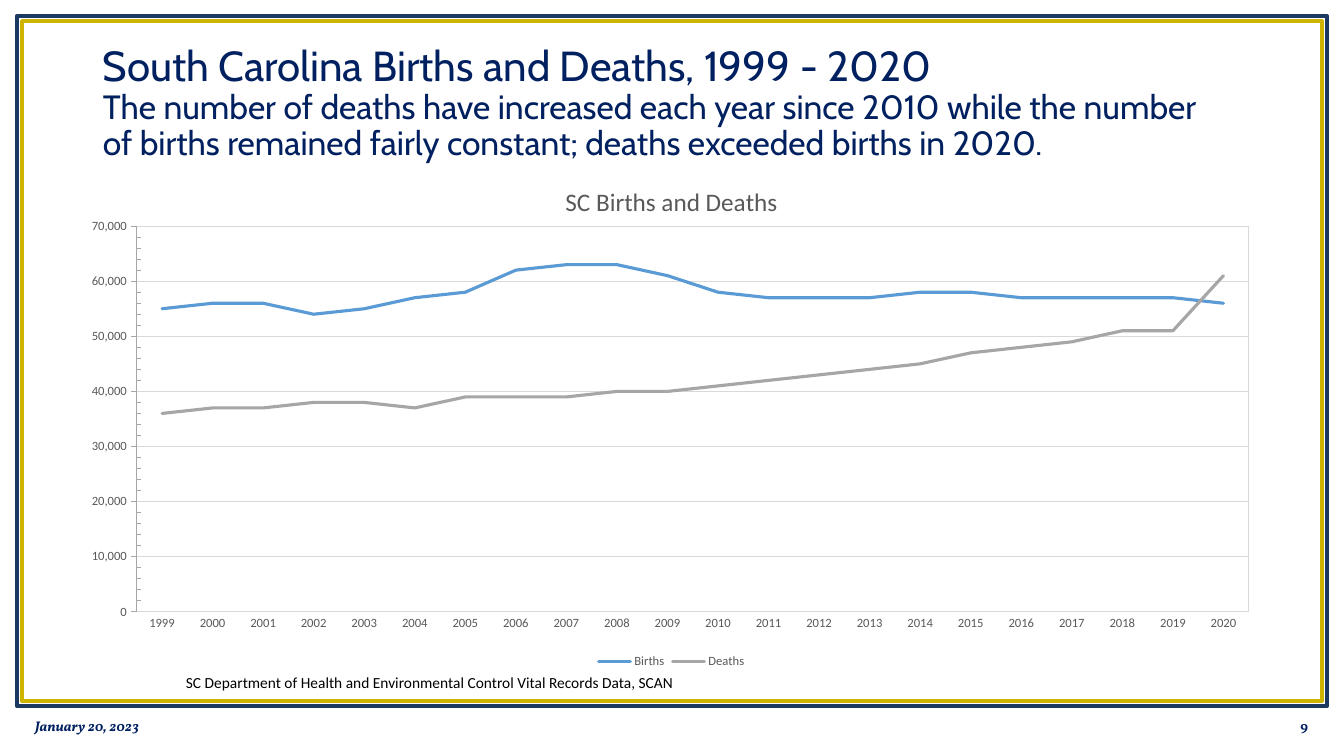
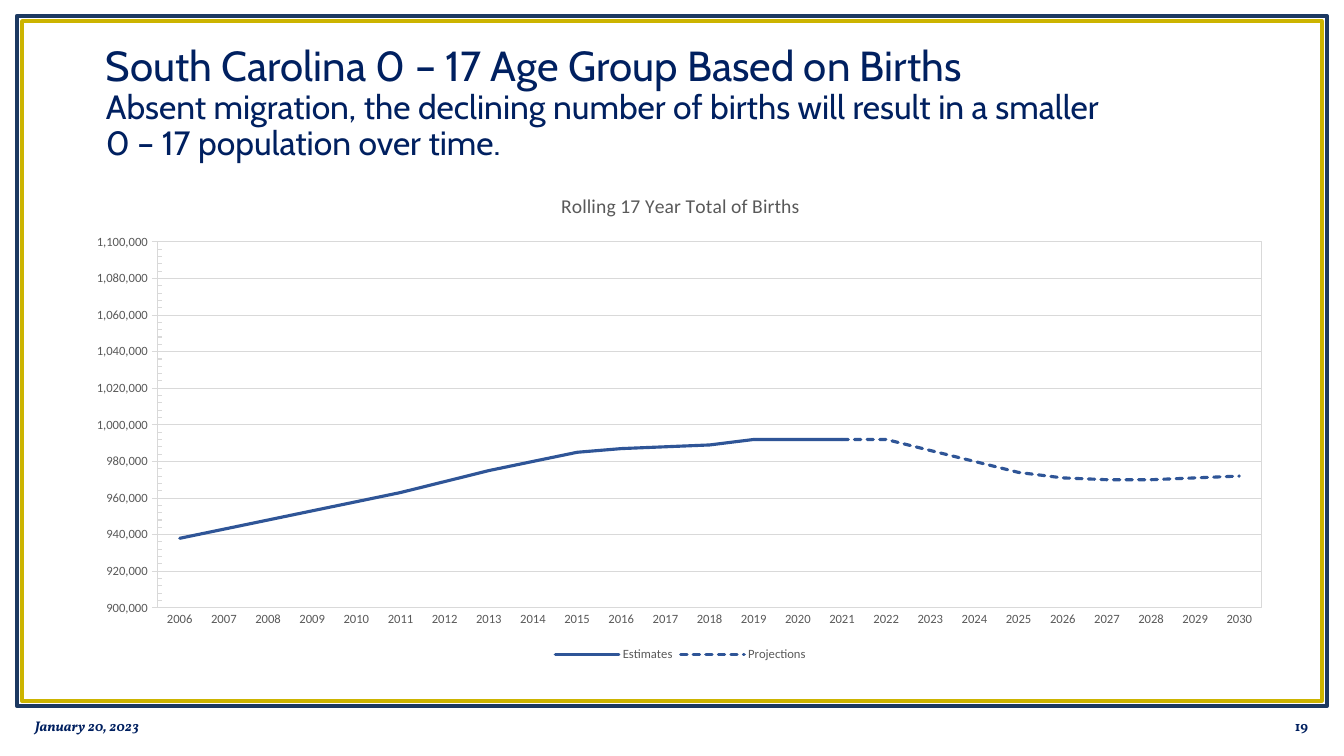
from lxml.etree import SubElement as Sub
from pptx import Presentation as Deck
from pptx.chart.data import CategoryChartData as Data
from pptx.dml.color import RGBColor as Rgb
from pptx.enum.chart import XL_CHART_TYPE as Kind, XL_LEGEND_POSITION as Spot, XL_TICK_MARK as Tick
from pptx.enum.dml import MSO_LINE as Dash
from pptx.enum.shapes import MSO_SHAPE as Form
from pptx.enum.text import MSO_ANCHOR as Anchor, PP_ALIGN as Align
from pptx.oxml.ns import qn
from pptx.util import Emu, Pt

PX = 914400 / 100.8
WIDE, HIGH = 1344, 756
HUES = {
    "navy": "1C3961", "gold": "CCB400", "title": "002060", "black": "000000",
    "text": "595959", "grid": "D9D9D9", "axis": "A6A6A6",
    "sky": "5B9BD5", "gray": "A6A6A6", "blue": "2F5597",
}
FRAMES = [((17, 16, 1310, 690), "navy", 3), ((22, 21, 1300, 680), "gold", 2.5)]
PAGES = [
    {
        "page": "9",
        "head": (93, 40, 1150, 121),
        "lines": [
            "South Carolina Births and Deaths, 1999 - 2020",
            "The number of deaths have increased each year since 2010 while the number "
            "of births remained fairly constant; deaths exceeded births in 2020.",
        ],
        "chart": (80, 164, 1183, 509),
        "plot": (57, 62, 1112, 386),
        "name": ("SC Births and Deaths", 18),
        "axis": "axis",
        "range": None,
        "years": range(1999, 2021),
        "rows": [
            ("Births", "sky", None, [55, 56, 56, 54, 55, 57, 58, 62, 63, 63, 61,
                                     58, 57, 57, 57, 58, 58, 57, 57, 57, 57, 56]),
            ("Deaths", "gray", None, [36, 37, 37, 38, 38, 37, 39, 39, 39, 40, 40,
                                      41, 42, 43, 44, 45, 47, 48, 49, 51, 51, 61]),
        ],
        "note": "SC Department of Health and Environmental Control Vital Records Data, SCAN",
    },
    {
        "page": "19",
        "head": (96, 40, 1095, 121),
        "lines": [
            "South Carolina 0 – 17 Age Group Based on Births",
            "Absent migration, the declining number of births will result in a smaller",
            "0 – 17 population over time.",
        ],
        "chart": (74, 174, 1213, 492),
        "plot": (84, 68, 1104, 366),
        "name": ("Rolling 17 Year Total of Births", 14),
        "axis": "grid",
        "range": (900000, 1100000),
        "years": range(2006, 2031),
        "rows": [
            ("Estimates", "blue", None, [938, 943, 948, 953, 958, 963, 969, 975, 980, 985,
                                         987, 988, 989, 992, 992, 992] + [None] * 9),
            ("Projections", "blue", Dash.SQUARE_DOT,
             [None] * 15 + [992, 992, 986, 980, 974, 971, 970, 970, 971, 972]),
        ],
        "note": None,
    },
]


def hue(key):
    """Return a named colour."""
    return Rgb.from_string(HUES[key])


def place(box):
    """Turn a box in px into EMU lengths."""
    return [Emu(round(v * PX)) for v in box]


def style(font, size, key, face, bold=None, slant=None):
    """Set the look of a font."""
    font.size, font.name, font.bold, font.italic = Pt(size), face, bold, slant
    font.color.rgb = hue(key)


def stroke(line, key, width):
    """Set the colour and width of a line."""
    line.color.rgb = hue(key)
    line.width = Pt(width)


def add_box(slide, box, anchor=Anchor.TOP):
    """Add a wrapping text box and return its first paragraph."""
    frame = slide.shapes.add_textbox(*place(box)).text_frame
    frame.word_wrap = True
    frame.vertical_anchor = anchor
    return frame.paragraphs[0]


def add_run(para, text, *look):
    """Add one styled run."""
    run = para.add_run()
    run.text = text
    style(run.font, *look)


def add_frame(slide):
    """Draw the double border."""
    for box, key, width in FRAMES:
        rect = slide.shapes.add_shape(Form.RECTANGLE, *place(box))
        rect.shadow.inherit = False
        rect.fill.background()
        stroke(rect.line, key, width)


def add_foot(slide, box, page):
    """Write the date at the left and the page number at the right of a band."""
    left, top, width, height = box
    span = 302
    date = add_box(slide, (left, top, span, height), Anchor.MIDDLE)
    add_run(date, "January 20, 2023", 10, "title", "Vollkorn", True, True)
    num = add_box(slide, (left + width - span, top, span, height), Anchor.MIDDLE)
    num.alignment = Align.RIGHT
    add_run(num, page, 10, "title", "Vollkorn", True)


def add_head(slide, box, lines):
    """Write a large first line over smaller ones."""
    para = add_box(slide, box)
    para.line_spacing = 0.9
    for i, text in enumerate(lines):
        if i:
            para.add_line_break()
        add_run(para, text, 24 if i else 30, "title", "Cabin")


def fit_plot(chart, box, plot):
    """Fix the inner plot area within the chart box and give it a border."""
    area = chart._chartSpace.find(".//" + qn("c:plotArea"))
    for old in area.findall(qn("c:layout")):
        area.remove(old)
    lay = Sub(area, qn("c:layout"))
    area.insert(0, lay)
    man = Sub(lay, qn("c:manualLayout"))
    parts = [("layoutTarget", "inner"), ("xMode", "edge"), ("yMode", "edge")]
    parts += [(key, f"{plot[i] / box[2 + i % 2]:.3f}") for i, key in enumerate("xywh")]
    for key, val in parts:
        Sub(man, qn("c:" + key), val=val)
    line = Sub(Sub(area, qn("c:spPr")), qn("a:ln"), w=str(Pt(0.75)))
    Sub(Sub(line, qn("a:solidFill")), qn("a:srgbClr"), val=HUES["grid"])


def add_lines(slide, box, page):
    """Add the line chart with its axes, legend and title."""
    data = Data(number_format="#,##0")
    data.categories = [str(year) for year in page["years"]]
    for name, _, _, vals in page["rows"]:
        data.add_series(name, [v and v * 1000 for v in vals])
    chart = slide.shapes.add_chart(Kind.LINE, *place(box), data).chart
    style(chart.font, 10, "black", "Calibri")
    chart.has_title = True
    name, size = page["name"]
    add_run(chart.chart_title.text_frame.paragraphs[0], name, size, "text", "Calibri", False)
    chart.chart_title.include_in_layout = False
    chart.has_legend = True
    chart.legend.position = Spot.BOTTOM
    chart.legend.include_in_layout = False
    style(chart.legend.font, 9, "text", "Calibri")
    cats, vals = chart.category_axis, chart.value_axis
    for axis, key in ((cats, "grid"), (vals, page["axis"])):
        style(axis.tick_labels.font, 9, "text", "Calibri")
        stroke(axis.format.line, key, 0.75)
    cats.major_tick_mark = cats.minor_tick_mark = Tick.NONE
    vals.major_tick_mark, vals.minor_tick_mark = Tick.OUTSIDE, Tick.INSIDE
    vals.tick_labels.number_format = "#,##0"
    vals.tick_labels.number_format_is_linked = False
    stroke(vals.major_gridlines.format.line, "grid", 0.75)
    if page["range"]:
        vals.minimum_scale, vals.maximum_scale = page["range"]
    plot = chart.plots[0]
    plot.vary_by_categories = False
    for row, (_, key, dash, _) in zip(plot.series, page["rows"]):
        row.smooth = False
        stroke(row.format.line, key, 2.25)
        if dash:
            row.format.line.dash_style = dash
        row._element.find(".//" + qn("a:ln")).set("cap", "rnd")
    fit_plot(chart, box, page["plot"])


def add_note(slide, box, text):
    """Write the source note."""
    add_run(add_box(slide, box), text, 11, "black", "Calibri")


def add_page(deck, page):
    """Build one chart slide."""
    slide = deck.slides.add_slide(deck.slide_layouts[6])
    add_frame(slide)
    add_head(slide, page["head"], page["lines"])
    add_foot(slide, (25, 706, 1293, 40), page["page"])
    add_lines(slide, page["chart"], page)
    if page["note"]:
        add_note(slide, (176, 668, 760, 29), page["note"])


def main():
    """Build and save the deck."""
    deck = Deck()
    deck.slide_width, deck.slide_height = place((WIDE, HIGH))
    for page in PAGES:
        add_page(deck, page)
    deck.save("out.pptx")


if __name__ == "__main__":
    main()
